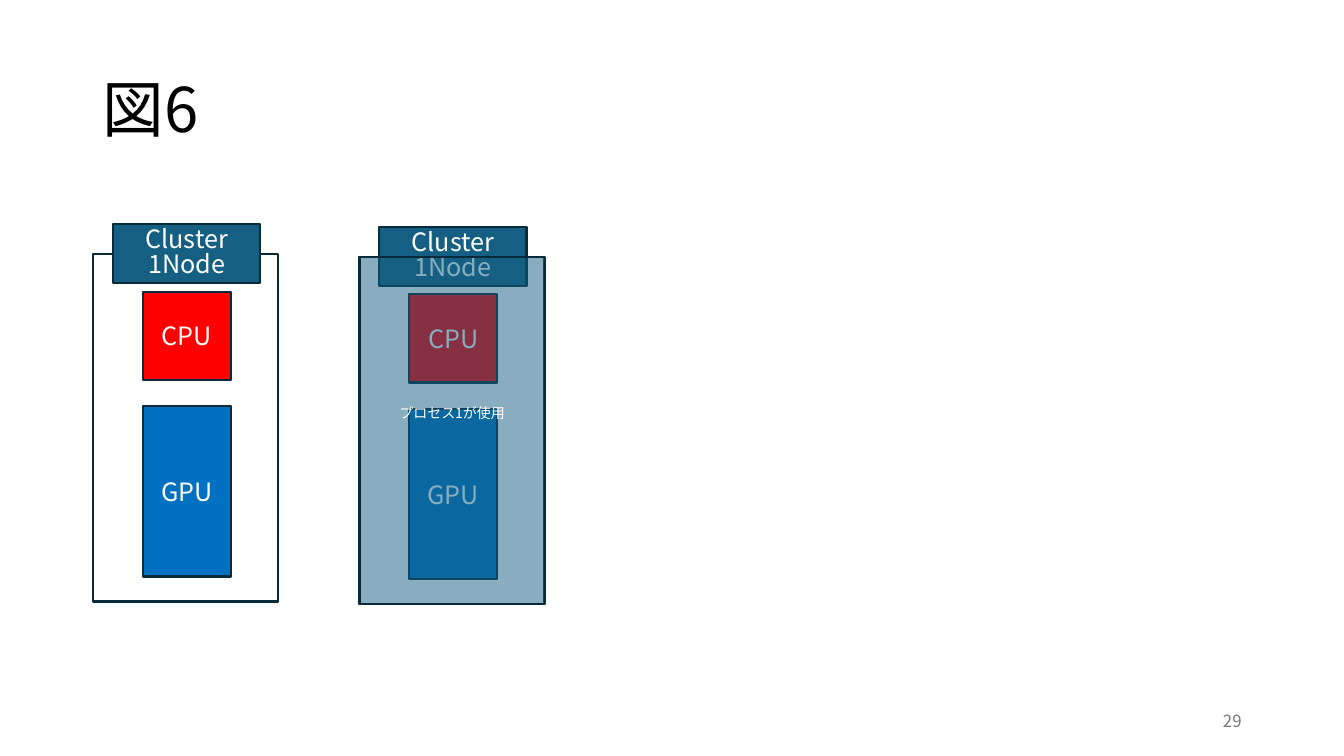
"""Build the slide for figure 6: two compute nodes, one of them in use by a process."""
from typing import NamedTuple

from lxml.etree import SubElement
from pptx import Presentation
from pptx.dml.color import RGBColor
from pptx.enum.shapes import MSO_SHAPE as Preset
from pptx.enum.text import MSO_ANCHOR as Anchor, PP_ALIGN as Align
from pptx.oxml.ns import qn
from pptx.util import Cm, Pt

FONT = "Noto Sans CJK JP"
BLACK = RGBColor(0x00, 0x00, 0x00)
WHITE = RGBColor(0xFF, 0xFF, 0xFF)
GRAY = RGBColor(0x79, 0x79, 0x79)
RED = RGBColor(0xFF, 0x00, 0x00)
BLUE = RGBColor(0x00, 0x70, 0xC0)
TEAL = RGBColor(0x15, 0x60, 0x82)
OUTLINE = RGBColor(0x09, 0x2A, 0x39)


class Box(NamedTuple):
    """A rectangle placed in centimetres from the corner of its node."""
    left: float
    top: float
    width: float
    height: float
    fill: RGBColor
    text: str = ""
    size: float = 18
    spacing: float = 1.0
    bottom_inset: float = 0.13
    opacity: int = 100


class Node(NamedTuple):
    """A node's corner in centimetres and the boxes it holds."""
    left: float
    top: float
    boxes: tuple[Box, ...]


HARDWARE = (
    Box(0, 0, 4.67, 8.76, WHITE),
    Box(1.26, 0.95, 2.22, 2.22, RED, "CPU"),
    Box(1.26, 3.83, 2.22, 4.3, BLUE, "GPU"),
    Box(0.51, -0.76, 3.71, 1.5, TEAL, "Cluster 1Node", spacing=0.83),
)
PROCESS = Box(0.01, 0, 4.67, 8.76, TEAL, "プロセス1が使用", size=10,
              bottom_inset=1.02, opacity=51)
NODES = (
    Node(2.34, 6.4, HARDWARE),
    Node(9.05, 6.47, HARDWARE + (PROCESS,)),
)


def write_text(shape, text: str, *, size: float, color: RGBColor,
               align: Align = Align.CENTER, spacing: float = 1.0,
               bottom_inset: float = 0.13) -> None:
    """Put one formatted paragraph into a shape."""
    frame = shape.text_frame
    frame.word_wrap = True
    frame.vertical_anchor = Anchor.MIDDLE
    frame.margin_bottom = Cm(bottom_inset)
    paragraph = frame.paragraphs[0]
    paragraph.alignment = align
    paragraph.line_spacing = spacing
    run = paragraph.add_run()
    run.text = text
    run.font.size = Pt(size)
    run.font.name = FONT
    run.font.color.rgb = color
    SubElement(run.font._element, qn("a:ea"), typeface=FONT)


def draw_box(group, node: Node, box: Box) -> None:
    """Draw one rectangle of a node."""
    shape = group.shapes.add_shape(
        Preset.RECTANGLE, Cm(node.left + box.left), Cm(node.top + box.top),
        Cm(box.width), Cm(box.height))
    shape.shadow.inherit = False
    shape.fill.solid()
    shape.fill.fore_color.rgb = box.fill
    shape.line.color.rgb = OUTLINE
    shape.line.width = Pt(1.5)
    if box.opacity < 100:
        color = shape._element.spPr.find(qn("a:solidFill"))[0]
        SubElement(color, qn("a:alpha"), val=str(box.opacity * 1000))
    if box.text:
        write_text(shape, box.text, size=box.size, color=WHITE,
                   spacing=box.spacing, bottom_inset=box.bottom_inset)


def main() -> None:
    """Build and save the presentation."""
    presentation = Presentation()
    presentation.slide_width = Cm(33.87)
    presentation.slide_height = Cm(19.05)
    slide = presentation.slides.add_slide(presentation.slide_layouts[6])

    title = slide.shapes.add_textbox(Cm(2.33), Cm(1.01), Cm(29.21), Cm(3.68))
    write_text(title, "図6", size=44, color=BLACK, align=Align.LEFT, spacing=0.9)
    number = slide.shapes.add_textbox(Cm(23.92), Cm(17.66), Cm(7.62), Cm(1.01))
    write_text(number, "29", size=12, color=GRAY, align=Align.RIGHT)

    for node in NODES:
        group = slide.shapes.add_group_shape()
        for box in node.boxes:
            draw_box(group, node, box)

    presentation.save("out.pptx")


if __name__ == "__main__":
    main()
